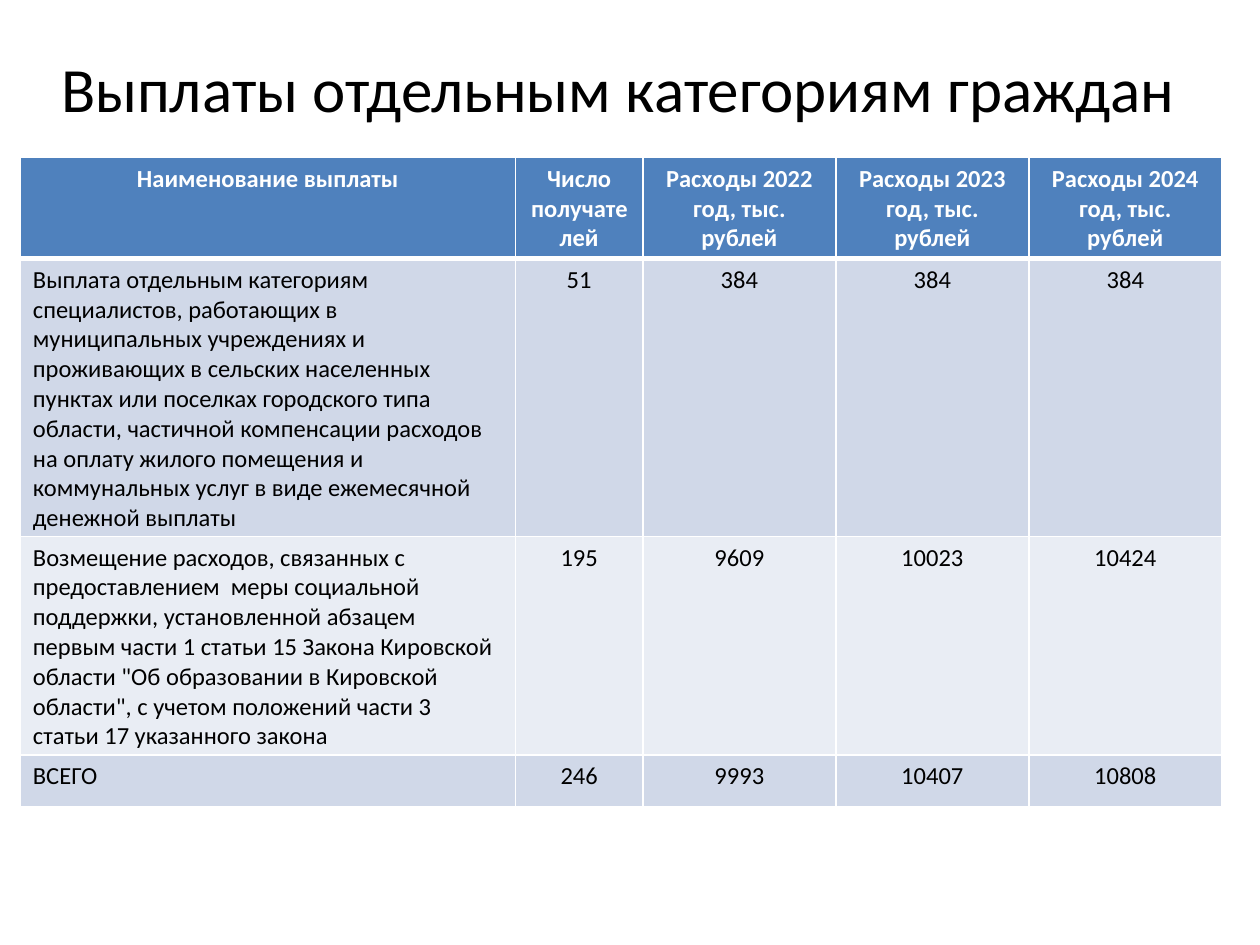
from lxml.etree import SubElement
from pptx import Presentation
from pptx.dml.color import RGBColor
from pptx.enum.text import MSO_ANCHOR, PP_ALIGN
from pptx.oxml.ns import qn
from pptx.util import Cm, Pt

TITLE = "Выплаты отдельным категориям граждан"
HEADER = (
    "Наименование выплаты",
    "Число получателей",
    "Расходы 2022 год, тыс. рублей",
    "Расходы 2023 год, тыс. рублей",
    "Расходы 2024\nгод, тыс. рублей",
)
PAYMENTS = [
    ("Выплата отдельным категориям специалистов, работающих в муниципальных "
     "учреждениях и проживающих в сельских населенных пунктах или поселках "
     "городского типа области, частичной компенсации расходов на оплату жилого "
     "помещения и коммунальных услуг в виде ежемесячной денежной выплаты",
     "51", "384", "384", "384"),
    ("Возмещение расходов, связанных с предоставлением  меры социальной "
     "поддержки, установленной абзацем первым части 1 статьи 15 Закона Кировской "
     "области \"Об образовании в Кировской области\", с учетом положений части 3 "
     "статьи 17 указанного закона",
     "195", "9609", "10023", "10424"),
    ("ВСЕГО", "246", "9993", "10407", "10808"),
]
COLUMN_WIDTHS = (9.98, 2.57, 3.89, 3.89, 3.89)
ROW_HEIGHTS = (2, 5.6, 4.4, 1.04)

FONT = "Calibri"
BLACK = RGBColor(0x00, 0x00, 0x00)
WHITE = RGBColor(0xFF, 0xFF, 0xFF)
HEADER_BLUE = RGBColor(0x4F, 0x81, 0xBD)
BANDS = (RGBColor(0xD0, 0xD8, 0xE8), RGBColor(0xE9, 0xED, 0xF4))


def write(frame, text, size, color, align, bold=False):
    frame.text = text
    for paragraph in frame.paragraphs:
        paragraph.alignment = align
        font = paragraph.font
        font.name, font.size, font.bold = FONT, Pt(size), bold
        font.color.rgb = color


def add_borders(cell, **widths):
    """Draw white cell borders; widths are points keyed by L, R, T, B."""
    properties = cell._tc.get_or_add_tcPr()
    for side, width in widths.items():
        line = SubElement(properties, qn(f"a:ln{side}"), w=str(Pt(width)))
        fill = SubElement(line, qn("a:solidFill"))
        SubElement(fill, qn("a:srgbClr"), val=str(WHITE))


def add_title(slide):
    frame = slide.shapes.add_textbox(Cm(0.79), Cm(0.76), Cm(23.34), Cm(2)).text_frame
    frame.word_wrap = True
    frame.vertical_anchor = MSO_ANCHOR.MIDDLE
    write(frame, TITLE, 36, BLACK, PP_ALIGN.CENTER)


def add_payments_table(slide):
    rows = [HEADER, *PAYMENTS]
    table = slide.shapes.add_table(
        len(rows), len(HEADER), Cm(0.41), Cm(3.18),
        Cm(sum(COLUMN_WIDTHS)), Cm(sum(ROW_HEIGHTS))).table
    for column, width in zip(table.columns, COLUMN_WIDTHS):
        column.width = Cm(width)
    for row, height in zip(table.rows, ROW_HEIGHTS):
        row.height = Cm(height)

    for r, values in enumerate(rows):
        is_header = r == 0
        for c, value in enumerate(values):
            cell = table.cell(r, c)
            add_borders(cell, L=1, R=1, T=3 if r == 1 else 1, B=3 if is_header else 1)
            cell.fill.solid()
            cell.fill.fore_color.rgb = HEADER_BLUE if is_header else BANDS[(r - 1) % 2]
            align = PP_ALIGN.CENTER if is_header or c else PP_ALIGN.LEFT
            write(cell.text_frame, value, 14, WHITE if is_header else BLACK,
                  align, bold=is_header)


def main():
    presentation = Presentation()
    presentation.slide_width, presentation.slide_height = Cm(25.4), Cm(19.05)
    slide = presentation.slides.add_slide(presentation.slide_layouts[6])
    add_title(slide)
    add_payments_table(slide)
    presentation.save("out.pptx")


if __name__ == "__main__":
    main()
